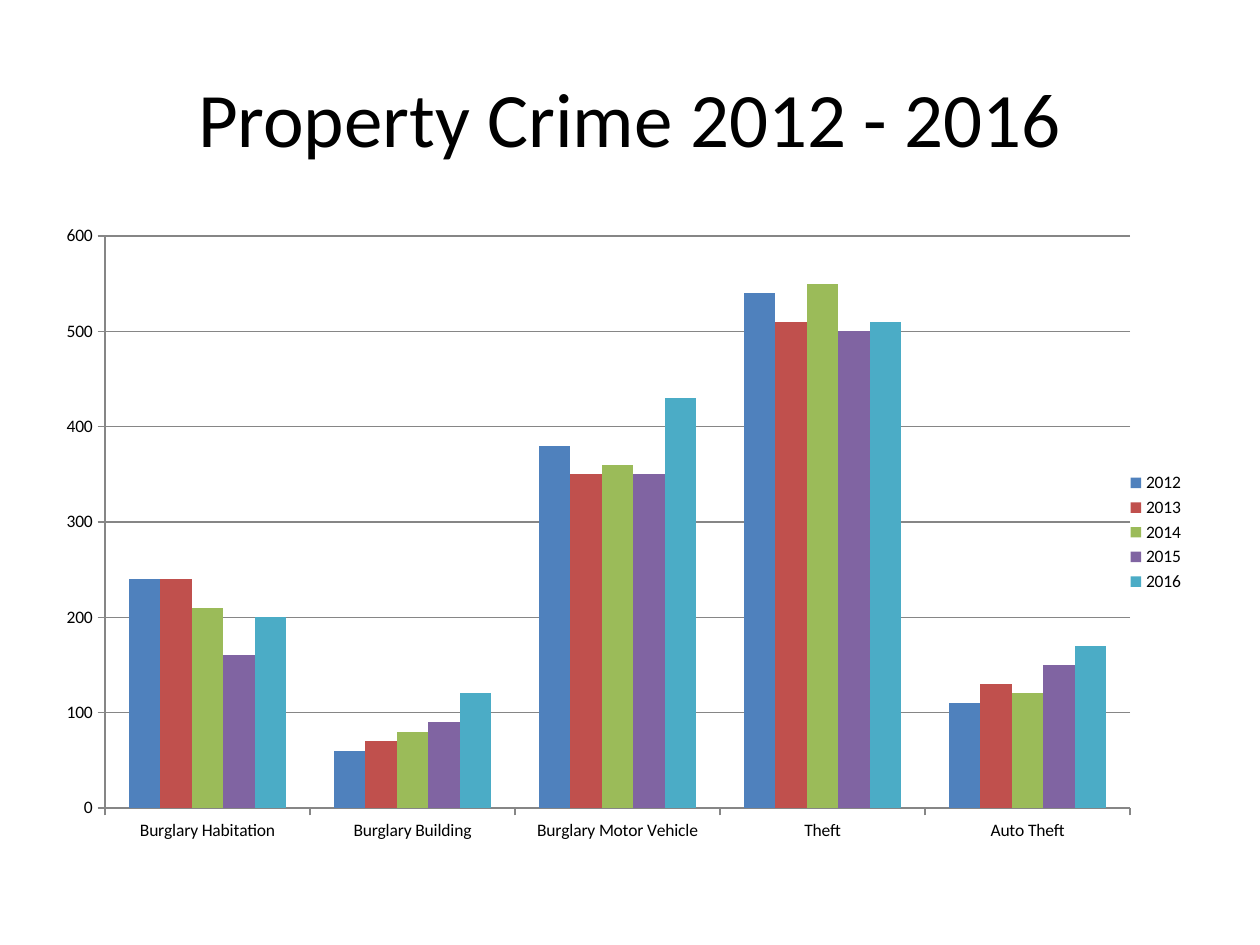
"""Build a slide with a clustered column chart of property crime by year."""
from lxml import etree
from pptx import Presentation
from pptx import util as u
from pptx.chart.data import CategoryChartData
from pptx.dml.color import RGBColor
from pptx.enum import chart as ch, text as tx
from pptx.oxml import ns

TITLE = "Property Crime 2012 - 2016"
CATS = ["Burglary Habitation", "Burglary Building", "Burglary Motor Vehicle",
        "Theft", "Auto Theft"]
YEARS = {
    "2012": [240, 60, 380, 540, 110],
    "2013": [240, 70, 350, 510, 130],
    "2014": [210, 80, 360, 550, 120],
    "2015": [160, 90, 350, 500, 150],
    "2016": [200, 120, 430, 510, 170],
}
HUES = {"2012": "4F81BD", "2013": "C0504D", "2014": "9BBB59",
        "2015": "8064A2", "2016": "4BACC6", "text": "000000", "line": "868686"}
FONT = "Calibri"
PLOT = {"layoutTarget": "inner", "xMode": "edge", "yMode": "edge",
        "x": 0.037, "y": 0.025, "w": 0.904, "h": 0.917}


def hue(key):
    return RGBColor.from_string(HUES[key])


def style(font, size):
    font.name, font.size, font.bold = FONT, u.Pt(size), False
    font.color.rgb = hue("text")


def write(slide, words, *, at, size, align):
    box = slide.shapes.add_textbox(*map(u.Inches, at))
    frame = box.text_frame
    frame.word_wrap = True
    frame.vertical_anchor = tx.MSO_ANCHOR.MIDDLE
    para = frame.paragraphs[0]
    para.alignment = align
    run = para.add_run()
    run.text = words
    style(run.font, size)


def rule(form):
    form.line.color.rgb = hue("line")
    form.line.width = u.Pt(0.75)


def place(chart):
    area = chart._chartSpace.chart.plotArea
    for old in area.findall(ns.qn("c:layout")):
        area.remove(old)
    layout = etree.Element(ns.qn("c:layout"))
    manual = etree.SubElement(layout, ns.qn("c:manualLayout"))
    for name, value in PLOT.items():
        etree.SubElement(manual, ns.qn("c:" + name)).set("val", str(value))
    area.insert(0, layout)


def draw(slide, at):
    data = CategoryChartData()
    data.categories = CATS
    for year, counts in YEARS.items():
        data.add_series(year, counts)
    chart = slide.shapes.add_chart(
        ch.XL_CHART_TYPE.COLUMN_CLUSTERED, *map(u.Inches, at), data).chart
    style(chart.font, 10)
    chart.has_title = False
    chart.has_legend = True
    chart.legend.position = ch.XL_LEGEND_POSITION.RIGHT
    chart.legend.include_in_layout = False
    plot = chart.plots[0]
    plot.gap_width, plot.overlap, plot.vary_by_categories = 150, 0, False
    for bar in plot.series:
        bar.format.fill.solid()
        bar.format.fill.fore_color.rgb = hue(bar.name)
    for axis in (chart.category_axis, chart.value_axis):
        axis.major_tick_mark = ch.XL_TICK_MARK.OUTSIDE
        axis.minor_tick_mark = ch.XL_TICK_MARK.NONE
        rule(axis.format)
    scale = chart.value_axis
    scale.minimum_scale, scale.maximum_scale, scale.major_unit = 0, 600, 100
    scale.has_major_gridlines = True
    rule(scale.major_gridlines.format)
    place(chart)


def main():
    deck = Presentation()
    deck.slide_width, deck.slide_height = u.Inches(10), u.Inches(7.5)
    slide = deck.slides.add_slide(deck.slide_layouts[6])
    write(slide, TITLE, at=(0.5, 0.3, 9, 1.25), size=44, align=tx.PP_ALIGN.CENTER)
    draw(slide, (0.5, 1.75, 9, 4.95))
    deck.save("out.pptx")


if __name__ == "__main__":
    main()
